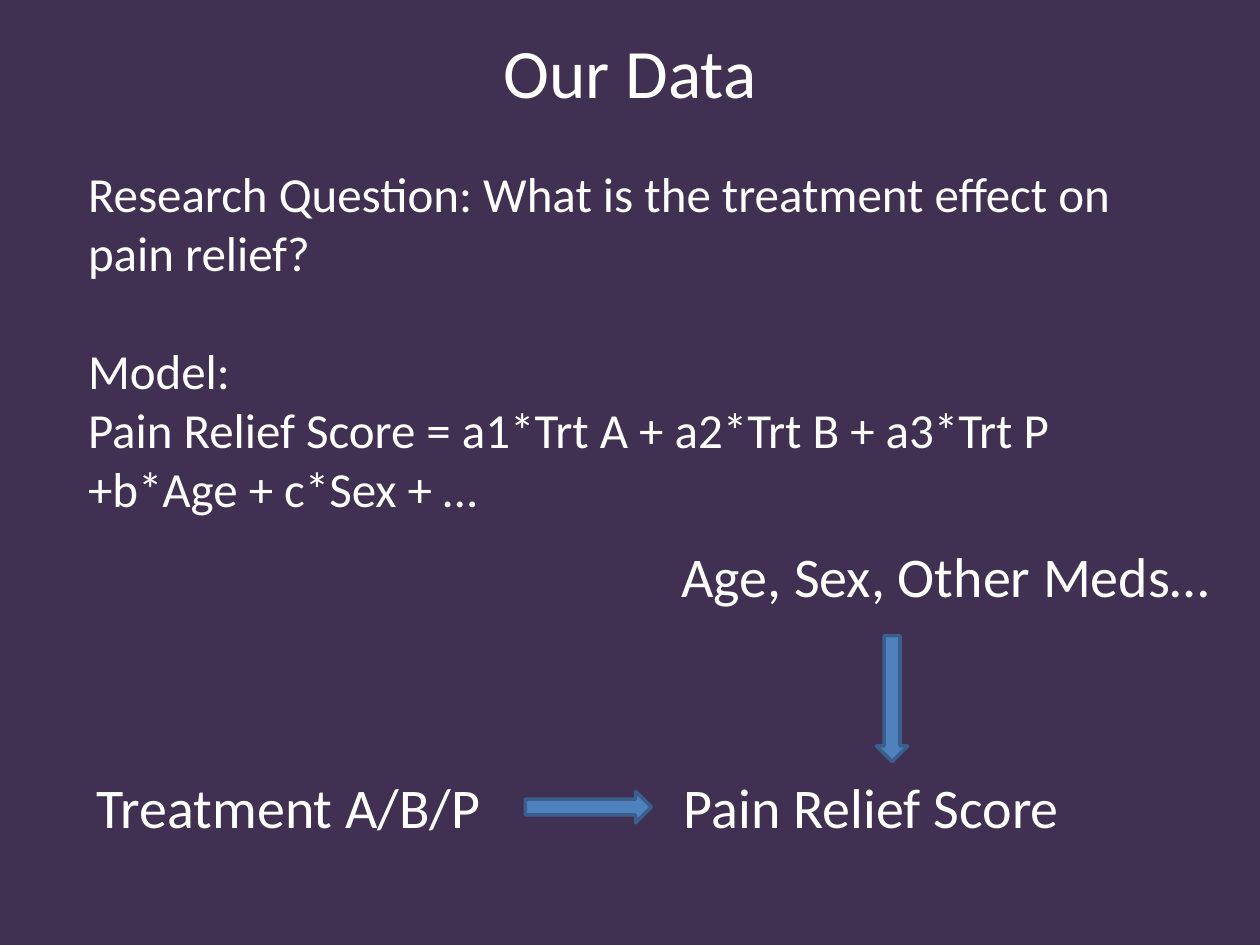
from dataclasses import dataclass

from pptx import Presentation
from pptx.dml.color import RGBColor as Rgb
from pptx.enum.shapes import MSO_SHAPE as Shape
from pptx.enum.text import MSO_ANCHOR as Anchor, MSO_AUTO_SIZE as AutoSize, PP_ALIGN as Align
from pptx.util import Inches, Pt


@dataclass(frozen=True)
class Theme:
    font: str = "Calibri"
    background: Rgb = Rgb(0x40, 0x31, 0x52)
    text: Rgb = Rgb(0xFF, 0xFF, 0xFF)
    arrow: Rgb = Rgb(0x4F, 0x81, 0xBD)
    arrow_line: Rgb = Rgb(0x3A, 0x5F, 0x8C)
    title_size: float = 39.6
    body_size: float = 28
    label_size: float = 32
    section_gap: float = 34


THEME = Theme()
TITLE = "Our Data"
TITLE_AREA = (0.5, 0.17, 9, 0.78)
BODY_AREA = (0.6, 1.25, 8.98, 2.93)
SECTIONS = [
    ["Research Question: What is the treatment effect on pain relief?"],
    ["Model:", "Pain Relief Score = a1*Trt A + a2*Trt B + a3*Trt P +b*Age + c*Sex + …"],
]
LABELS = [
    ("Treatment A/B/P", (0.67, 6.08, 3.28, 0.64)),
    ("Pain Relief Score", (5.33, 6.08, 3.21, 0.64)),
    ("Age, Sex, Other Meds…", (5.31, 4.25, 4.46, 0.64)),
]
ARROW_SIZE = (1, 0.25)
ARROWS = [(4.17, 6.28, 0), (6.58, 5.42, 90)]


def inches(values):
    return [Inches(value) for value in values]


def add_span(para, text, size):
    span = para.add_run()
    span.text = text
    span.font.name = THEME.font
    span.font.size = Pt(size)
    span.font.color.rgb = THEME.text


def add_title(page):
    title = page.shapes.title
    title.left, title.top, title.width, title.height = inches(TITLE_AREA)
    frame = title.text_frame
    frame.auto_size = AutoSize.NONE
    frame.vertical_anchor = Anchor.MIDDLE
    para = frame.paragraphs[0]
    para.alignment = Align.CENTER
    add_span(para, TITLE, THEME.title_size)


def add_text(page, area, sections, size, wrap):
    frame = page.shapes.add_textbox(*inches(area)).text_frame
    frame.word_wrap = wrap
    frame.auto_size = AutoSize.SHAPE_TO_FIT_TEXT
    para = None
    for section in sections:
        for index, text in enumerate(section):
            first = para is None
            para = frame.paragraphs[0] if first else frame.add_paragraph()
            if index == 0 and not first:
                para.space_before = Pt(THEME.section_gap)
            add_span(para, text, size)


def add_arrow(page, left, top, rotation):
    arrow = page.shapes.add_shape(Shape.RIGHT_ARROW, *inches((left, top, *ARROW_SIZE)))
    arrow.rotation = rotation
    arrow.shadow.inherit = False
    arrow.fill.solid()
    arrow.fill.fore_color.rgb = THEME.arrow
    arrow.line.color.rgb = THEME.arrow_line
    arrow.line.width = Pt(2)


def main():
    deck = Presentation()
    deck.slide_width, deck.slide_height = inches((10, 7.5))
    page = deck.slides.add_slide(deck.slide_layouts.get_by_name("Title Only"))
    page.background.fill.solid()
    page.background.fill.fore_color.rgb = THEME.background
    add_title(page)
    add_text(page, BODY_AREA, SECTIONS, THEME.body_size, True)
    for text, area in LABELS:
        add_text(page, area, [[text]], THEME.label_size, False)
    for arrow in ARROWS:
        add_arrow(page, *arrow)
    deck.save("out.pptx")


if __name__ == "__main__":
    main()
